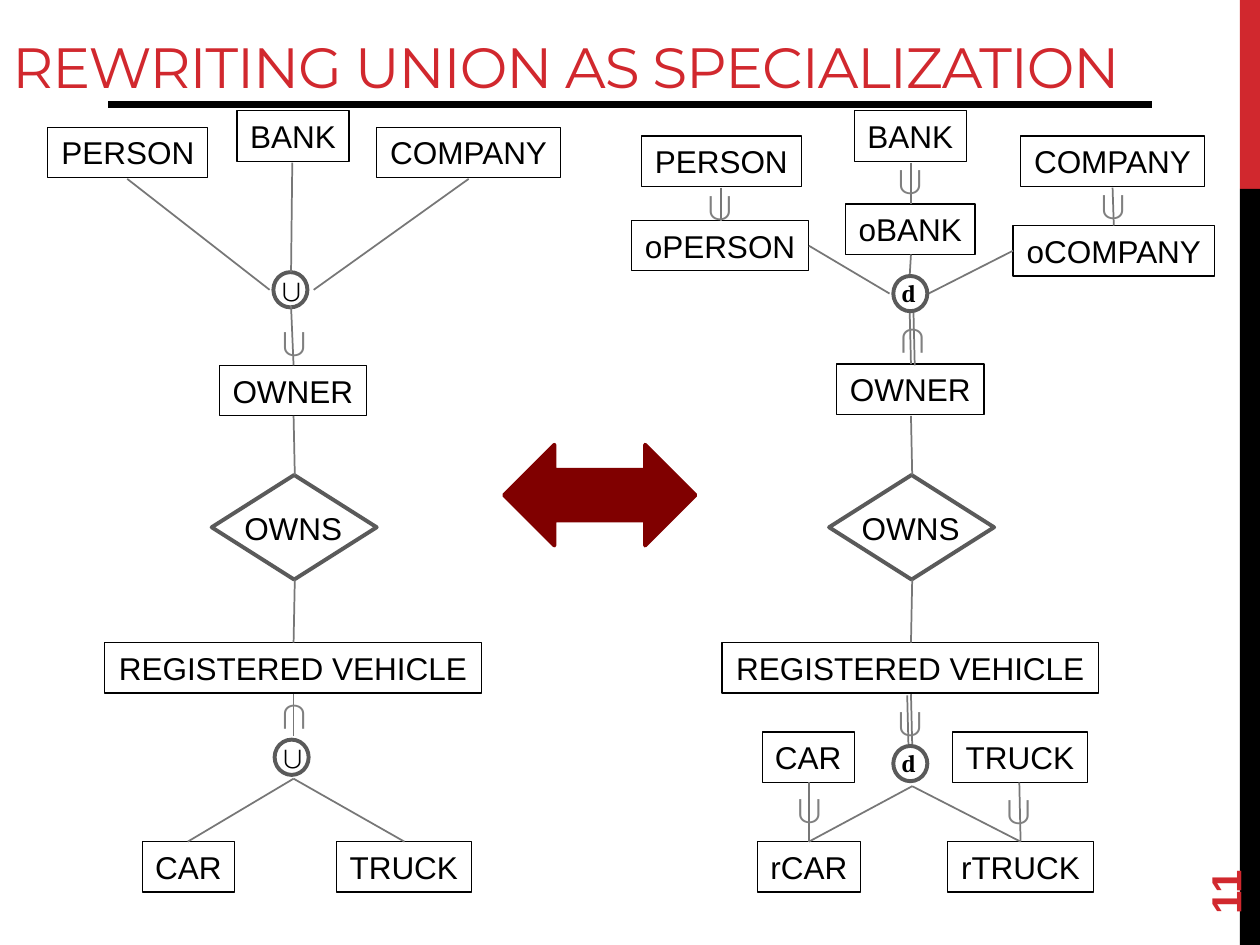
from lxml.etree import SubElement
from pptx import Presentation
from pptx.dml.color import RGBColor
from pptx.enum.shapes import MSO_CONNECTOR, MSO_SHAPE
from pptx.enum.text import MSO_ANCHOR, MSO_AUTO_SIZE, PP_ALIGN
from pptx.oxml.ns import qn
from pptx.util import Inches, Pt

COLORS = {"red": "D1282E", "black": "000000", "dark": "5A5A5A",
          "line": "777777", "gray": "808080", "maroon": "800000"}
CELL = Inches(0.1)  # the grid has 100 columns and 75 rows
SHIFT = 49          # columns from the left diagram to the right one
ROW = 4             # rows taken by one entity box


def color(name):
    return RGBColor.from_string(COLORS[name])


def cells(*counts):
    return [round(n * CELL) for n in counts]


def write(shape, text, size=18, font="Arial", hue="black", bold=False,
          align=PP_ALIGN.LEFT, anchor=MSO_ANCHOR.TOP, grow=True):
    frame = shape.text_frame
    frame.word_wrap = not grow
    frame.auto_size = MSO_AUTO_SIZE.SHAPE_TO_FIT_TEXT if grow else MSO_AUTO_SIZE.NONE
    frame.vertical_anchor = anchor
    para = frame.paragraphs[0]
    para.alignment = align
    run = para.add_run()
    run.text = text
    run.font.size = Pt(size)
    run.font.name = font
    run.font.bold = bold
    run.font.color.rgb = color(hue)
    return run


def label(shapes, box, text, **style):
    shape = shapes.add_textbox(*cells(*box))
    return shape, write(shape, text, **style)


def figure(shapes, kind, box, fill=None, line=None, width=2.25):
    shape = shapes.add_shape(kind, *cells(*box))
    shape.shadow.inherit = False
    if fill:
        shape.fill.solid()
        shape.fill.fore_color.rgb = color(fill)
    else:
        shape.fill.background()
    if line:
        shape.line.color.rgb = color(line)
        shape.line.width = Pt(width)
    else:
        shape.line.fill.background()
    return shape


def link(shapes, x1, y1, x2, y2, hue="line", width=1):
    line = shapes.add_connector(MSO_CONNECTOR.STRAIGHT, *cells(x1, y1, x2, y2))
    line.line.color.rgb = color(hue)
    line.line.width = Pt(width)
    SubElement(line._element.spPr, qn("a:effectLst"))


def entity(shapes, x, y, width, text):
    box = figure(shapes, MSO_SHAPE.RECTANGLE, (x, y, width, ROW), line="black", width=0.75)
    write(box, text, align=PP_ALIGN.CENTER)


def relation(shapes, x, y, text):
    group = shapes.add_group_shape().shapes
    figure(group, MSO_SHAPE.DIAMOND, (x, y, 13.1, 8.3), line="dark")
    label(group, (x + 1.6, y + 2.2, 9.9, ROW), text)


def node(shapes, x, y, text, width, bold=False):
    """Circle that joins the branches, with its sign."""
    group = shapes.add_group_shape().shapes
    label(group, (x - 0.3, y - 0.3, width, 3.4), text, size=14, font="Cambria", bold=bold)
    figure(group, MSO_SHAPE.OVAL, (x, y, 2.7, 2.8), line="dark")


def subset(shapes, x, y, sign="⋃"):
    label(shapes, (x, y, ROW, ROW), sign, font="Cambria", hue="gray")


def frame(shapes):
    for y, high, hue in ((0, 15, "red"), (15, 60, "black")):
        figure(shapes, MSO_SHAPE.RECTANGLE, (98.4, y, 1.6, high), fill=hue)
    link(shapes, 8.6, 8.3, 91.4, 8.3, "black", 4)
    _, run = label(shapes, (0, 1.7, 100, 6.7), "REWRITING UNION AS SPECIALIZATION",
                   size=32.4, font="Montserrat", hue="red",
                   anchor=MSO_ANCHOR.BOTTOM, grow=False)
    run.font._element.set("spc", "-60")
    page, _ = label(shapes, (90, 64.4, 14.4, 4), "11", size=24, hue="red", bold=True,
                    anchor=MSO_ANCHOR.MIDDLE, grow=False)
    page.rotation = 270


def spine(shapes, dx, top):
    """Parts that both diagrams share."""
    entity(shapes, 18.8 + dx, 8.8, 8.9, "BANK")
    entity(shapes, 17.4 + dx, top, 11.7, "OWNER")
    entity(shapes, 8.3 + dx, 51, 29.9, "REGISTERED VEHICLE")
    relation(shapes, 16.8 + dx, 37.7, "OWNS")
    link(shapes, 23.3 + dx, 33, 23.4 + dx, 37.7)
    link(shapes, 23.4 + dx, 46, 23.3 + dx, 51)


def union(shapes):
    spine(shapes, 0, 29)
    for box in ((3.8, 10.1, 12.7, "PERSON"), (29.9, 10.1, 14.6, "COMPANY"),
                (11.3, 66.8, 7.3, "CAR"), (26.7, 66.8, 10.7, "TRUCK")):
        entity(shapes, *box)
    node(shapes, 21.7, 21.6, "⋃", 3.5)
    node(shapes, 21.8, 58.7, "⋃", 3.5)
    for ends in ((23.2, 12.9, 23.1, 21.6), (24.9, 23, 37.2, 14.2),
                 (10.1, 14.2, 21.4, 23), (23.1, 24.3, 23.3, 29),
                 (23.3, 55.1, 23.3, 58.4), (23.3, 61.8, 14.9, 66.8),
                 (23.3, 61.8, 32.1, 66.8)):
        link(shapes, *ends)
    subset(shapes, 21.4, 25.1)
    subset(shapes, 21.4, 54.7, "⋂")


def special(shapes):
    spine(shapes, SHIFT, 28.9)
    for box in ((50.9, 10.8, 12.7, "PERSON"), (81, 10.8, 14.6, "COMPANY"),
                (50.1, 17.5, 14.1, "oPERSON"), (67.1, 16.2, 10.3, "oBANK"),
                (80.4, 17.9, 16, "oCOMPANY"),
                (60.5, 58.1, 7.3, "CAR"), (75.6, 58.1, 10.7, "TRUCK"),
                (60.1, 66.8, 8.2, "rCAR"), (75.2, 66.8, 11.6, "rTRUCK")):
        entity(shapes, *box)
    for ends in ((72.3, 20.2, 72.2, 21.9), (73.7, 23.3, 80.4, 19.9),
                 (64.2, 19.5, 70.6, 23.3), (72.3, 12.9, 72.3, 16.2),
                 (88.4, 17.9, 88.3, 14.9), (57.2, 14.9, 57.2, 17.5),
                 (72.2, 24.7, 72.3, 28.9), (72.5, 24.8, 72.6, 29),
                 (72, 55.2, 72.1, 59.1), (72.3, 55.1, 72.4, 59.1),
                 (72.4, 62.4, 64.2, 66.8), (72.4, 62.4, 81, 66.8),
                 (64.2, 62.1, 64.2, 66.8), (80.9, 62.1, 81, 66.8)):
        link(shapes, *ends)
    for y in (21.9, 59.2):
        node(shapes, 70.9, y, "d", 3.1, bold=True)
    for spot in ((55.2, 14.3), (70.3, 12.2), (86.4, 14.2), (70.3, 55.2),
                 (62.3, 62.1), (78.9, 62.2), (70.5, 24.8, "⋂")):
        subset(shapes, *spot)


def main():
    deck = Presentation()
    deck.slide_width, deck.slide_height = cells(100, 75)
    shapes = deck.slides.add_slide(deck.slide_layouts[6]).shapes
    frame(shapes)
    union(shapes)
    special(shapes)
    figure(shapes, MSO_SHAPE.LEFT_RIGHT_ARROW, (40, 35.3, 15.2, 8), "maroon", "maroon")
    deck.save("out.pptx")


if __name__ == "__main__":
    main()
